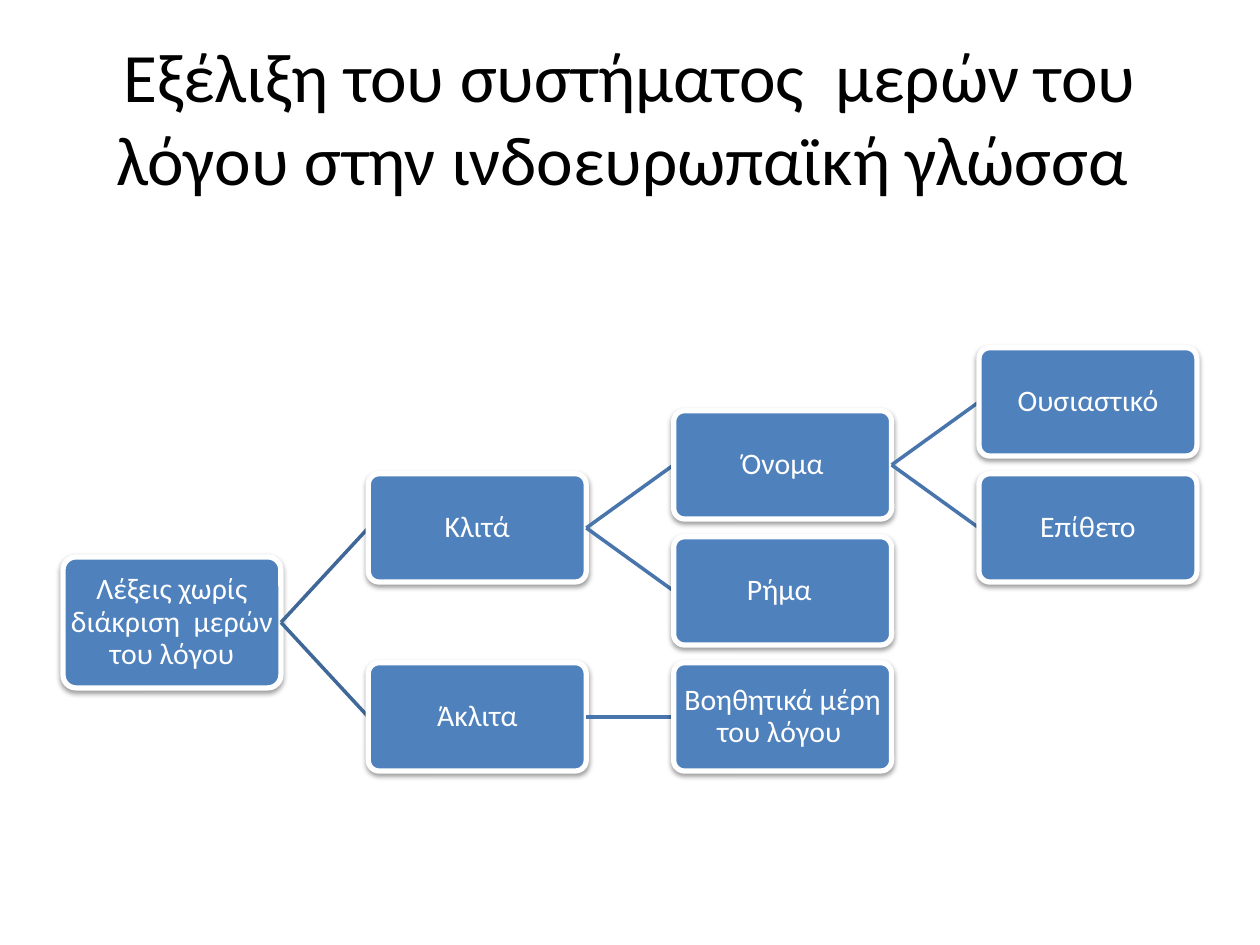
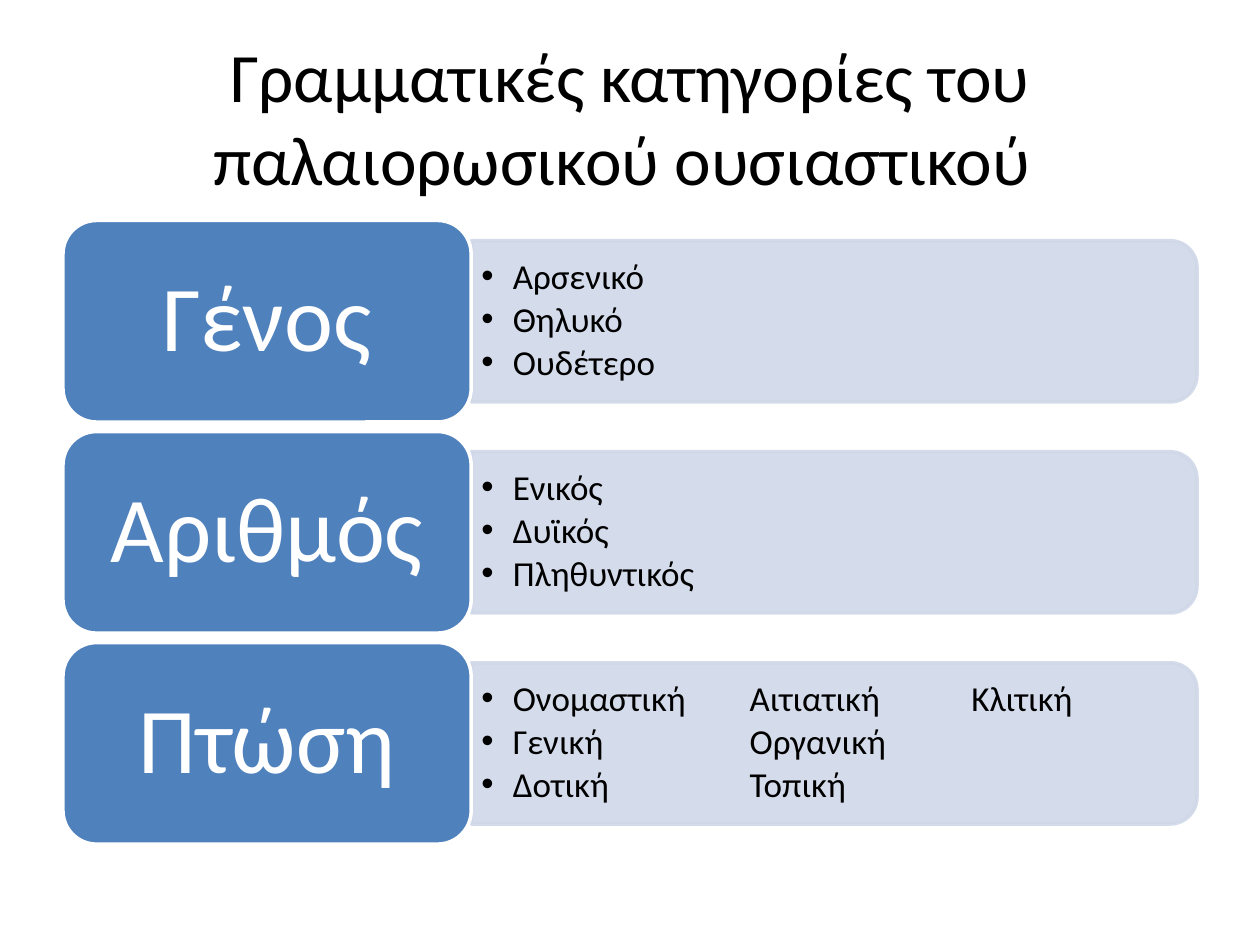
from lxml.etree import SubElement
from pptx import Presentation
from pptx.dml.color import RGBColor
from pptx.enum.shapes import MSO_CONNECTOR as LINK, MSO_SHAPE as SHAPE
from pptx.enum.text import MSO_ANCHOR as ANCHOR, PP_ALIGN as ALIGN
from pptx.oxml.ns import qn
from pptx.util import Inches, Pt

# Shared look
WHITE, BLACK, BLUE, PALE = "FFFFFF", "000000", "4F81BD", "D0D8E8"
WIDTH, HEIGHT = 10, 7.5
MARGIN = 0.05 * WIDTH
CONTENT = WIDTH - 2 * MARGIN
TITLE = dict(size=39.6, color=BLACK, spacing=1.0, inset=(0.1, 0.05))
NODE = dict(size=17, color=WHITE, spacing=0.9, inset=(0, 0))
CATEGORY = dict(size=53, color=WHITE, spacing=0.9, inset=(0.3, 0.19))
VALUES = dict(size=20, color=BLACK, spacing=0.9, inset=(0.08, 0.04),
              align=ALIGN.LEFT, after=3)


def paint(part, color, width=None):
    """Colour a fill, or a line when a width is given."""
    if width:
        part.width = Pt(width)
        part = part.fill
    part.solid()
    part.fore_color.rgb = RGBColor.from_string(color)


def write(shape, lines, look):
    """Set the lines as paragraphs in the given look."""
    frame = shape.text_frame
    across, down = (Inches(side) for side in look["inset"])
    frame_format = dict(word_wrap=True, vertical_anchor=ANCHOR.MIDDLE,
                        margin_left=across, margin_right=across,
                        margin_top=down, margin_bottom=down)
    for key, value in frame_format.items():
        setattr(frame, key, value)
    frame.text = "\n".join(lines)
    paragraph_format = dict(alignment=look.get("align", ALIGN.CENTER),
                            line_spacing=look["spacing"],
                            space_after=Pt(look.get("after", 0)))
    for paragraph in frame.paragraphs:
        for key, value in paragraph_format.items():
            setattr(paragraph, key, value)
        for run in paragraph.runs:
            run.font.name, run.font.size = "Calibri", Pt(look["size"])
            paint(run.font.fill, look["color"])
    return frame.paragraphs


deck = Presentation()
deck.slide_width, deck.slide_height = Inches(WIDTH), Inches(HEIGHT)

# Slides and their titles
titles = ["Εξέλιξη του συστήματος  μερών του λόγου στην ινδοευρωπαϊκή γλώσσα ",
          "Γραμματικές κατηγορίες του παλαιορωσικού ουσιαστικού "]
pages = []
for title in titles:
    page = deck.slides.add_slide(deck.slide_layouts[6]).shapes
    heading = page.add_textbox(Inches(MARGIN), Inches(0.04 * HEIGHT),
                               Inches(CONTENT), Inches(HEIGHT / 6))
    write(heading, [title], TITLE)
    pages.append(page)
tree, categories = pages

# Tree of parts of speech: text, column, row, parent, height
NODE_W, NODE_H, ROOT_H = 1.73, 0.86, 1.04
COLUMN = (CONTENT - NODE_W) / 3
ROW, FIRST_ROW = 0.5, 3.19
nodes = {
    "words": ("Λέξεις χωρίς διάκριση  μερών του λόγου", 0, 3.5, None, ROOT_H),
    "inflected": ("Κλιτά", 1, 2, "words", NODE_H),
    "nominal": ("Όνομα", 2, 1, "inflected", NODE_H),
    "noun": ("Ουσιαστικό", 3, 0, "nominal", NODE_H),
    "adjective": ("Επίθετο", 3, 2, "nominal", NODE_H),
    "verb": ("Ρήμα ", 2, 3, "inflected", NODE_H),
    "uninflected": ("Άκλιτα", 1, 5, "words", NODE_H),
    "auxiliary": ("Βοηθητικά μέρη του λόγου ", 2, 5, "uninflected", NODE_H),
}
for text, column, row, parent, height in nodes.values():
    left, middle = MARGIN + column * COLUMN, FIRST_ROW + row * ROW
    if parent:
        parent_column, parent_row = nodes[parent][1:3]
        branch = tree.add_connector(
            LINK.STRAIGHT,
            Inches(MARGIN + parent_column * COLUMN + NODE_W),
            Inches(FIRST_ROW + parent_row * ROW), Inches(left), Inches(middle))
        paint(branch.line, "4875AC" if parent_column else "3F6797", 2)
        SubElement(branch._element.spPr, qn("a:effectLst"))
    node = tree.add_shape(SHAPE.ROUNDED_RECTANGLE, Inches(left),
                          Inches(middle - height / 2), Inches(NODE_W), Inches(height))
    node.adjustments[0] = 0.1
    paint(node.fill, BLUE)
    paint(node.line, WHITE, 3)
    node.shadow.inherit = False
    effects = node._element.spPr.find(qn("a:effectLst"))
    shade = SubElement(effects, qn("a:outerShdw"), blurRad=str(Pt(3.1)),
                       dist=str(Pt(1.6)), dir="5400000", rotWithShape="0")
    shade_color = SubElement(shade, qn("a:srgbClr"), val=BLACK)
    SubElement(shade_color, qn("a:alpha"), val="38000")
    write(node, [text], NODE)

# Grammatical categories: a name block and a bar of values in each row
BLOCK_W, BLOCK_H, BAR_H = 0.36 * CONTENT, 1.6, 1.28
BAR_W = CONTENT - BLOCK_W
BAR_LEFT = MARGIN + BLOCK_W
TOP, PITCH = 1.75, 1.675
CASE_STOPS = (2.13, 3.89)
rows = {
    "Γένος": ["Αρσενικό", "Θηλυκό", "Ουδέτερο"],
    "Αριθμός": ["Ενικός", "Δυϊκός", "Πληθυντικός"],
    "Πτώση": ["Ονομαστική\tΑιτιατική\tΚλιτική", "Γενική\tΟργανική",
              "Δοτική\tΤοπική"],
}
for index, (category, members) in enumerate(rows.items()):
    top = TOP + index * PITCH
    middle = top + BLOCK_H / 2

    # The bar stands upright and is turned so its round end faces right
    bar = categories.add_shape(
        SHAPE.ROUND_2_SAME_RECTANGLE, Inches(BAR_LEFT + (BAR_W - BAR_H) / 2),
        Inches(middle - BAR_W / 2), Inches(BAR_H), Inches(BAR_W))
    bar.rotation = 90
    bar.shadow.inherit = False
    paint(bar.fill, PALE)
    paint(bar.line, PALE, 2)
    for color in bar._element.spPr.iter(qn("a:srgbClr")):
        SubElement(color, qn("a:alpha"), val="90000")

    # Bulleted values, with tab stops for the columns of cases
    values = categories.add_textbox(Inches(BAR_LEFT), Inches(middle - 0.58),
                                    Inches(BAR_W - 0.06), Inches(1.15))
    for paragraph in write(values, members, VALUES):
        props = paragraph._p.get_or_add_pPr()
        props.set("marL", str(Inches(0.25)))
        props.set("indent", str(-Inches(0.25)))
        SubElement(props, qn("a:buFont"), typeface="Arial")
        SubElement(props, qn("a:buChar"), char="•")
        stops = SubElement(props, qn("a:tabLst"))
        for stop in CASE_STOPS:
            SubElement(stops, qn("a:tab"), pos=str(Inches(stop)), algn="l")

    block = categories.add_shape(SHAPE.ROUNDED_RECTANGLE, Inches(MARGIN),
                                 Inches(top), Inches(BLOCK_W), Inches(BLOCK_H))
    block.shadow.inherit = False
    paint(block.fill, BLUE)
    paint(block.line, WHITE, 2)
    write(block, [category], CATEGORY)

deck.save("out.pptx")
